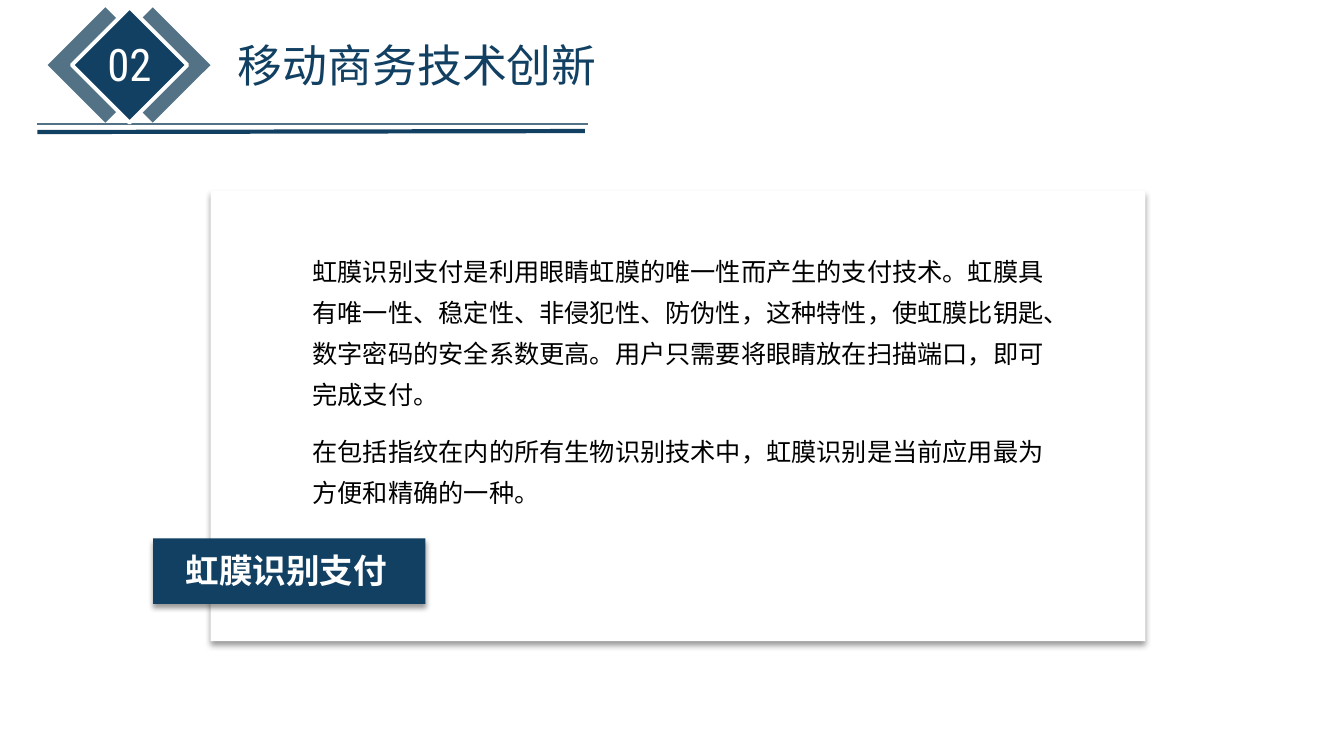
import pptx
import pptx.util
import pptx.dml.color
import pptx.enum.shapes
import pptx.enum.text
import pptx.oxml.ns
import lxml.etree
from dataclasses import dataclass

EMU_PER_PX = 9144  # 100 px to the inch


@dataclass(frozen=True)
class Theme:
    navy: str = "124062"
    slate: str = "537285"
    white: str = "FFFFFF"
    black: str = "000000"
    chinese: str = "Noto Sans CJK SC"
    digits: str = "Roboto Condensed"
    heading_size: int = 32
    label_size: int = 24
    body_size: int = 18


THEME = Theme()
SHAPES = pptx.enum.shapes.MSO_SHAPE
ALIGN = pptx.enum.text.PP_ALIGN
ANCHOR = pptx.enum.text.MSO_ANCHOR

BODY_TEXTS = [
    "虹膜识别支付是利用眼睛虹膜的唯一性而产生的支付技术。虹膜具有唯一性、稳定性、非侵犯性、防伪性，"
    "这种特性，使虹膜比钥匙、数字密码的安全系数更高。用户只需要将眼睛放在扫描端口，即可完成支付。",
    "在包括指纹在内的所有生物识别技术中，虹膜识别是当前应用最为方便和精确的一种。",
]


def px(length):
    return pptx.util.Emu(length * EMU_PER_PX)


def rgb(color):
    return pptx.dml.color.RGBColor.from_string(color)


def add_xml(parent, tag, **attributes):
    return lxml.etree.SubElement(parent, pptx.oxml.ns.qn(tag), attributes)


def place(box, left, top, width, height):
    box.left, box.top, box.width, box.height = map(px, (left, top, width, height))


def write(box, texts, size, color, font_name=THEME.chinese, align=ALIGN.LEFT,
          bold=False, anchor=ANCHOR.TOP, line_spacing=1.0, gap=0):
    """Fill a box with plain paragraphs, the gap standing between them."""
    frame = box.text_frame
    frame.word_wrap = True
    frame.auto_size = pptx.enum.text.MSO_AUTO_SIZE.NONE
    frame.vertical_anchor = anchor
    for index, text in enumerate(texts):
        para = frame.add_paragraph() if index else frame.paragraphs[0]
        para.text = text
        para.alignment = align
        para.line_spacing = line_spacing
        para.space_before = pptx.util.Pt(gap if index else 0)
        properties = para._p.get_or_add_pPr()
        properties.set("marL", "0")
        properties.set("indent", "0")
        add_xml(properties, "a:buNone")
        font = para.font
        font.size = pptx.util.Pt(size)
        font.bold = bold
        font.color.rgb = rgb(color)
        font.name = font_name
        add_xml(properties.find(pptx.oxml.ns.qn("a:defRPr")), "a:ea", typeface=font_name)


def add_text(page, area, text, size, color, **style):
    box = page.shapes.add_textbox(*map(px, area))
    write(box, [text], size, color, **style)


def add_diamond(page, left, color, outline=None):
    diamond = page.shapes.add_shape(
        SHAPES.ROUNDED_RECTANGLE, px(left), px(24), px(81), px(81))
    diamond.adjustments[0] = 0
    diamond.rotation = 45
    diamond.shadow.inherit = False
    diamond.fill.solid()
    diamond.fill.fore_color.rgb = rgb(color)
    if outline:
        diamond.line.color.rgb = rgb(outline)
        diamond.line.width = pptx.util.Pt(2.75)
    else:
        diamond.line.fill.background()


def add_rule(page, start, end, color, width):
    rule = page.shapes.add_connector(
        pptx.enum.shapes.MSO_CONNECTOR.STRAIGHT, *map(px, start + end))
    rule.line.color.rgb = rgb(color)
    rule.line.width = pptx.util.Pt(width)
    add_xml(rule.element.spPr, "a:effectLst")


def add_raised_panel(page, area, color):
    panel = page.shapes.add_shape(SHAPES.RECTANGLE, *map(px, area))
    panel.fill.solid()
    panel.fill.fore_color.rgb = rgb(color)
    panel.line.fill.background()
    # Soft shadow straight below
    effects = add_xml(panel.element.spPr, "a:effectLst")
    shadow = add_xml(effects, "a:outerShdw", blurRad=str(pptx.util.Pt(4)),
                     dist=str(pptx.util.Pt(3)), dir="5400000",
                     algn="t", rotWithShape="0")
    shade = add_xml(shadow, "a:srgbClr", val=THEME.black)
    add_xml(shade, "a:alpha", val="40000")


def main():
    deck = pptx.Presentation()
    deck.slide_width, deck.slide_height = px(1333), px(750)
    page = deck.slides.add_slide(deck.slide_layouts[1])
    title, body = page.placeholders

    # Section number and rules
    add_rule(page, (583, 123), (37, 123), THEME.slate, 1)
    add_diamond(page, 111, THEME.slate)
    add_diamond(page, 64, THEME.slate)
    add_diamond(page, 88, THEME.navy, outline=THEME.white)
    add_text(page, (95, 32, 67, 64), "02", THEME.heading_size, THEME.white,
             font_name=THEME.digits, align=ALIGN.CENTER)
    add_rule(page, (580, 130), (37, 131), THEME.navy, 3)

    # Title
    place(title, 226, 32, 444, 64)
    write(title, ["移动商务技术创新"], THEME.heading_size, THEME.navy)

    # Card with its label
    add_raised_panel(page, (209, 189, 927, 447), THEME.white)
    add_raised_panel(page, (152, 534, 270, 65), THEME.navy)
    add_text(page, (173, 541, 222, 50), "虹膜识别支付", THEME.label_size,
             THEME.white, align=ALIGN.CENTER, bold=True)

    # Body text, brought in front of the card
    place(body, 300, 239, 759, 272)
    write(body, BODY_TEXTS, THEME.body_size, THEME.black, line_spacing=1.35, gap=12)
    page.shapes.element.append(body.element)

    deck.save("out.pptx")


if __name__ == "__main__":
    main()
